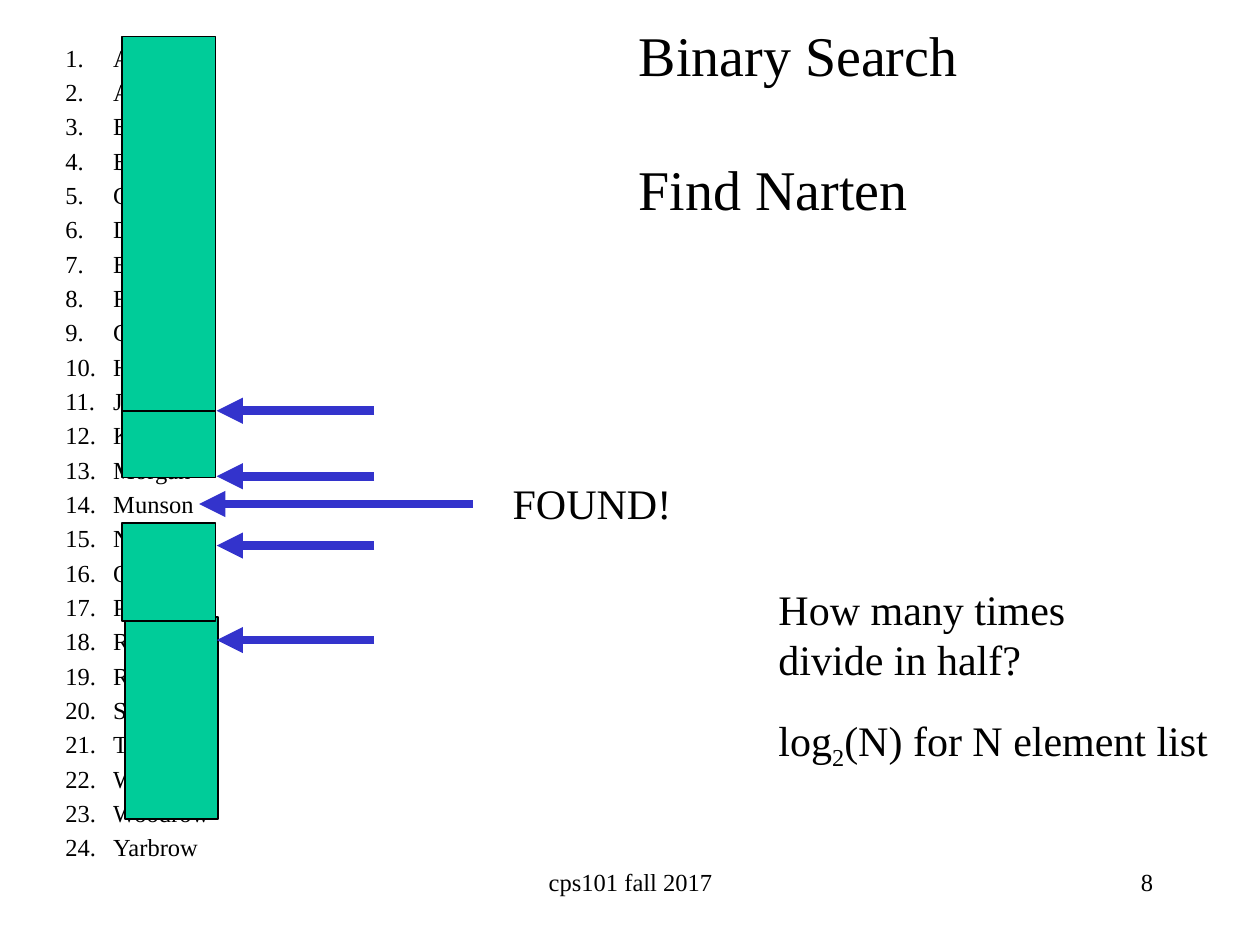
from dataclasses import dataclass

from lxml import etree
from pptx import Presentation
from pptx.dml.color import RGBColor
from pptx.enum.shapes import MSO_CONNECTOR, MSO_SHAPE
from pptx.enum.text import MSO_ANCHOR, MSO_AUTO_SIZE, PP_ALIGN
from pptx.oxml.ns import qn
from pptx.util import Inches, Pt

RECTANGLE = MSO_SHAPE.RECTANGLE
STRAIGHT = MSO_CONNECTOR.STRAIGHT
LEFT, CENTER, RIGHT = PP_ALIGN.LEFT, PP_ALIGN.CENTER, PP_ALIGN.RIGHT

FONT = "Times New Roman"
BLACK, GREEN, BLUE = "000000", "00CC99", "3333CC"
LIST_INDENT = 0.38

NAMES = [
    "Anderson", "Applegate", "Bethune", "Brooks", "Carter", "Douglas",
    "Edwards", "Franklin", "Griffin", "Holhouser", "Jefferson", "Klatchy",
    "Morgan", "Munson", "Narten", "Oliver", "Parker", "Rivers",
    "Roberts", "Stevenson", "Thomas", "Wilson", "Woodrow", "Yarbrow",
]


@dataclass
class Box:
    left: float
    top: float
    width: float
    height: float

    def lengths(self) -> list:
        return [Inches(v) for v in (self.left, self.top, self.width, self.height)]


@dataclass
class Label:
    box: Box
    lines: list[str]
    size: float
    align: PP_ALIGN = LEFT
    wrap: bool = False
    space_before: float = 0


@dataclass
class Arrow:
    start: float
    end: float
    y: float


LABELS = [
    Label(Box(3.97, 3.74, 1.48, 0.5), ["FOUND!"], 24),
    Label(Box(3.42, 6.83, 3.17, 0.5), ["cps101 fall 2017"], 14, CENTER, True),
    Label(Box(7.17, 6.83, 2.08, 0.5), ["8"], 14, RIGHT, True),
    Label(Box(6.08, 4.58, 2.58, 0.91), ["How many times", "divide in half?"], 24),
]
TITLE = Label(Box(4.97, 0.11, 2.76, 1.72), ["Binary Search", "Find Narten"], 32,
              space_before=38.3)
NAME_LIST = Label(Box(0.42, 0.29, 8.65, 6.46), NAMES, 14, wrap=True, space_before=2.8)
FORMULA = Label(Box(6.08, 5.62, 3.74, 0.5), ["log"], 24)

# Ruled-out parts of the list, from back to front
COVERS = [
    Box(0.97, 0.29, 0.74, 3.03),
    Box(0.99, 4.9, 0.74, 1.6),
    Box(0.97, 4.15, 0.74, 0.78),
    Box(0.97, 3.26, 0.74, 0.53),
]
ARROWS = [Arrow(2.97, 1.72, y) for y in (3.26, 5.08, 4.33, 3.78)]
ARROWS.append(Arrow(3.75, 1.58, 4))


def color(value: str) -> RGBColor:
    return RGBColor.from_string(value)


def apply(target, values: dict) -> None:
    for name, value in values.items():
        setattr(target, name, value)


def format_run(run, size: float) -> None:
    apply(run.font, {"name": FONT, "size": Pt(size)})
    run.font.color.rgb = color(BLACK)


def fill_text(shape, label: Label) -> None:
    frame = shape.text_frame
    apply(frame, {"auto_size": MSO_AUTO_SIZE.NONE, "word_wrap": label.wrap,
                  "vertical_anchor": MSO_ANCHOR.TOP})
    for index, line in enumerate(label.lines):
        paragraph = frame.add_paragraph() if index else frame.paragraphs[0]
        apply(paragraph, {"alignment": label.align,
                          "space_before": Pt(label.space_before if index else 0)})
        run = paragraph.add_run()
        run.text = line
        format_run(run, label.size)


def add_label(slide, label: Label):
    shape = slide.shapes.add_textbox(*label.box.lengths())
    fill_text(shape, label)
    return shape


def number_paragraphs(shape) -> None:
    indent = Inches(LIST_INDENT)
    for paragraph in shape.text_frame.paragraphs:
        paragraph.space_before = Pt(NAME_LIST.space_before)
        properties = paragraph._p.get_or_add_pPr()
        properties.set("marL", str(indent))
        properties.set("indent", str(-indent))
        bullet_font = etree.SubElement(properties, qn("a:buFont"))
        bullet_font.set("typeface", FONT)
        numbering = etree.SubElement(properties, qn("a:buAutoNum"))
        numbering.set("type", "arabicPeriod")


def add_cover(slide, box: Box) -> None:
    shape = slide.shapes.add_shape(RECTANGLE, *box.lengths())
    shape.shadow.inherit = False
    shape.fill.solid()
    shape.fill.fore_color.rgb = color(GREEN)
    shape.line.color.rgb = color(BLACK)
    shape.line.width = Pt(1)


def add_arrow(slide, arrow: Arrow) -> None:
    y = Inches(arrow.y)
    connector = slide.shapes.add_connector(
        STRAIGHT, Inches(arrow.start), y, Inches(arrow.end), y)
    connector.line.color.rgb = color(BLUE)
    connector.line.width = Pt(5)
    head = etree.SubElement(connector.line._get_or_add_ln(), qn("a:tailEnd"))
    head.set("type", "triangle")
    etree.SubElement(connector._element.spPr, qn("a:effectLst"))


def add_formula(slide) -> None:
    paragraph = add_label(slide, FORMULA).text_frame.paragraphs[0]
    for text, baseline in (("2", -25000), ("(N) for N element list", 0)):
        run = paragraph.add_run()
        run.text = text
        format_run(run, FORMULA.size)
        run.font._element.set("baseline", str(baseline))


def main() -> None:
    presentation = Presentation()
    apply(presentation, {"slide_width": Inches(10), "slide_height": Inches(7.5)})
    slide = presentation.slides.add_slide(presentation.slide_layouts[5])

    # Title
    title = slide.shapes.title
    apply(title, dict(zip(("left", "top", "width", "height"), TITLE.box.lengths())))
    fill_text(title, TITLE)

    # Numbered names with the ruled-out parts covered
    number_paragraphs(add_label(slide, NAME_LIST))
    for box in COVERS:
        add_cover(slide, box)

    # Search steps
    for arrow in ARROWS:
        add_arrow(slide, arrow)

    # Remarks, footer and slide number
    for label in LABELS:
        add_label(slide, label)
    add_formula(slide)

    presentation.save("out.pptx")


if __name__ == "__main__":
    main()
